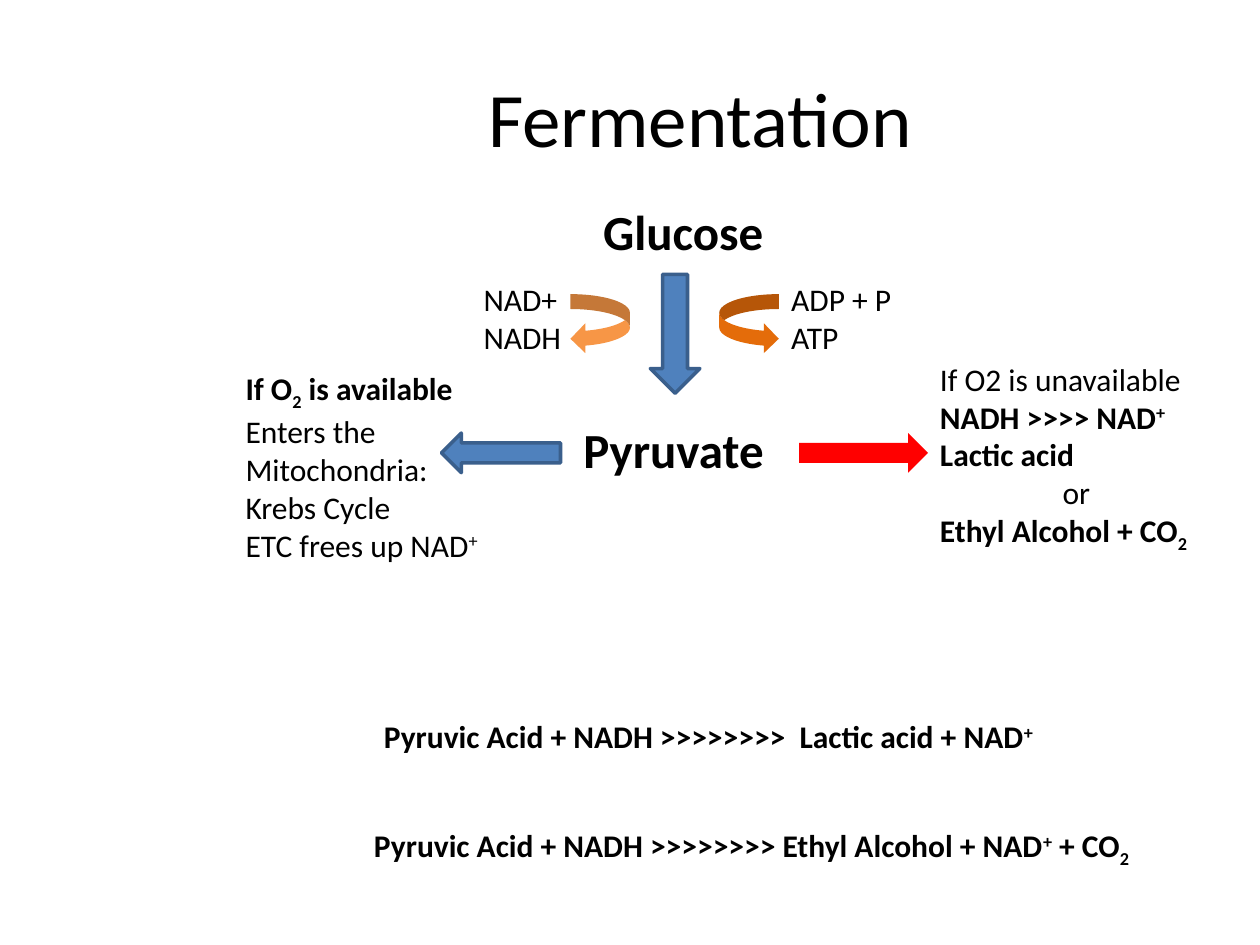
from dataclasses import dataclass
from typing import NamedTuple, Optional

from pptx import Presentation
from pptx import util as u
from pptx.dml.color import RGBColor
from pptx.enum import shapes, text

COLORS = {
    "text": "000000",
    "blue": "4F81BD",
    "outline": "3A5F8C",
    "red": "FF0000",
    "dark_orange": "E46C0A",
    "orange": "F79646",
}
SHAPE = shapes.MSO_SHAPE
ALIGN = text.PP_ALIGN
SUP, SUB = 30000, -25000


class Box(NamedTuple):
    left: float
    top: float
    width: float
    height: float


class Line(NamedTuple):
    runs: tuple
    bold: bool = False
    align: Optional[ALIGN] = None


@dataclass
class Label:
    box: Box
    lines: list
    size: int = 18


@dataclass
class Arrow:
    kind: SHAPE
    box: Box
    fill: str
    outline: Optional[str] = None


ARROWS = [
    Arrow(SHAPE.DOWN_ARROW, Box(13.11, 5.53, 1, 2.4), "blue", "outline"),
    Arrow(SHAPE.LEFT_ARROW, Box(8.9, 8.73, 2.4, 0.8), "blue", "outline"),
    Arrow(SHAPE.RIGHT_ARROW, Box(16.11, 8.73, 2.6, 0.8), "red"),
    Arrow(SHAPE.CURVED_RIGHT_ARROW, Box(14.5, 5.93, 1.2, 1.2), "dark_orange"),
    Arrow(SHAPE.CURVED_LEFT_ARROW, Box(11.5, 5.93, 1.2, 1.2), "orange"),
]

LABELS = [
    Label(Box(11.91, 3.93, 4.6, 1.45), [Line(("Glucose",), True)], 28),
    Label(Box(11.51, 8.34, 4.6, 1.45), [Line(("Pyruvate",), True)], 28),
    Label(Box(9.5, 5.53, 2.8, 1.8), [Line(("NAD+",)), Line(("NADH",))]),
    Label(Box(15.7, 5.53, 2.8, 1.8), [Line(("ADP + P",)), Line(("ATP",))]),
    Label(Box(4.7, 7.32, 5.41, 4.11), [
        Line(("If O", ("2", SUB), " is available"), True),
        Line(("Enters the Mitochondria:",)),
        Line(("Krebs Cycle",)),
        Line(("ETC frees up NAD", ("+", SUP))),
    ]),
    Label(Box(18.7, 7.13, 6, 4.11), [
        Line(("If O2 is unavailable",)),
        Line(("NADH >>>> NAD", ("+", SUP)), True),
        Line(("Lactic acid",), True),
        Line(("or",), align=ALIGN.CENTER),
        Line(("Ethyl Alcohol + CO", ("2", SUB)), True),
    ]),
    Label(Box(7.49, 14.33, 14.4, 1.02), [
        Line(("Pyruvic Acid + NADH >>>>>>>>  Lactic acid + NAD", ("+", SUP)), True),
    ]),
    Label(Box(7.29, 16.53, 16.4, 1.02), [
        Line(("Pyruvic Acid + NADH >>>>>>>> Ethyl Alcohol + NAD", ("+", SUP),
              " + CO", ("2", SUB)), True),
    ]),
]


def rgb(name: str) -> RGBColor:
    return RGBColor.from_string(COLORS[name])


def place(box: Box) -> list:
    return [u.Cm(v) for v in box]


def set_font(font, size: int, bold: bool = False) -> None:
    for name, value in {"name": "Calibri", "size": u.Pt(size), "bold": bold}.items():
        setattr(font, name, value)
    font.color.rgb = rgb("text")


def add_title(s, wording: str, box: Box) -> None:
    sp = s.shapes.title
    for name, value in zip(("left", "top", "width", "height"), place(box)):
        setattr(sp, name, value)
    tf = sp.text_frame
    tf.vertical_anchor = text.MSO_ANCHOR.MIDDLE
    p = tf.paragraphs[0]
    p.alignment = ALIGN.CENTER
    r = p.add_run()
    r.text = wording
    set_font(r.font, 44)


def add_arrow(s, arrow: Arrow) -> None:
    sp = s.shapes.add_shape(arrow.kind, *place(arrow.box))
    sp.shadow.inherit = False
    sp.fill.solid()
    sp.fill.fore_color.rgb = rgb(arrow.fill)
    if arrow.outline:
        sp.line.color.rgb = rgb(arrow.outline)
        sp.line.width = u.Pt(2)
    else:
        sp.line.fill.background()


def add_label(s, label: Label) -> None:
    tf = s.shapes.add_textbox(*place(label.box)).text_frame
    tf.word_wrap = True
    tf.auto_size = text.MSO_AUTO_SIZE.SHAPE_TO_FIT_TEXT
    for i, line in enumerate(label.lines):
        p = tf.add_paragraph() if i else tf.paragraphs[0]
        p.alignment = line.align
        for part in line.runs:
            wording, baseline = (part, 0) if isinstance(part, str) else part
            r = p.add_run()
            r.text = wording
            set_font(r.font, label.size, line.bold)
            if baseline:
                r._r.get_or_add_rPr().set("baseline", str(baseline))


def main() -> None:
    prs = Presentation()
    prs.slide_width, prs.slide_height = u.Cm(25.4), u.Cm(19.05)
    s = prs.slides.add_slide(prs.slide_layouts[5])
    add_title(s, "Fermentation", Box(4.1, 0.76, 20.03, 3.18))
    for arrow in ARROWS:
        add_arrow(s, arrow)
    for label in LABELS:
        add_label(s, label)
    prs.save("out.pptx")


if __name__ == "__main__":
    main()
